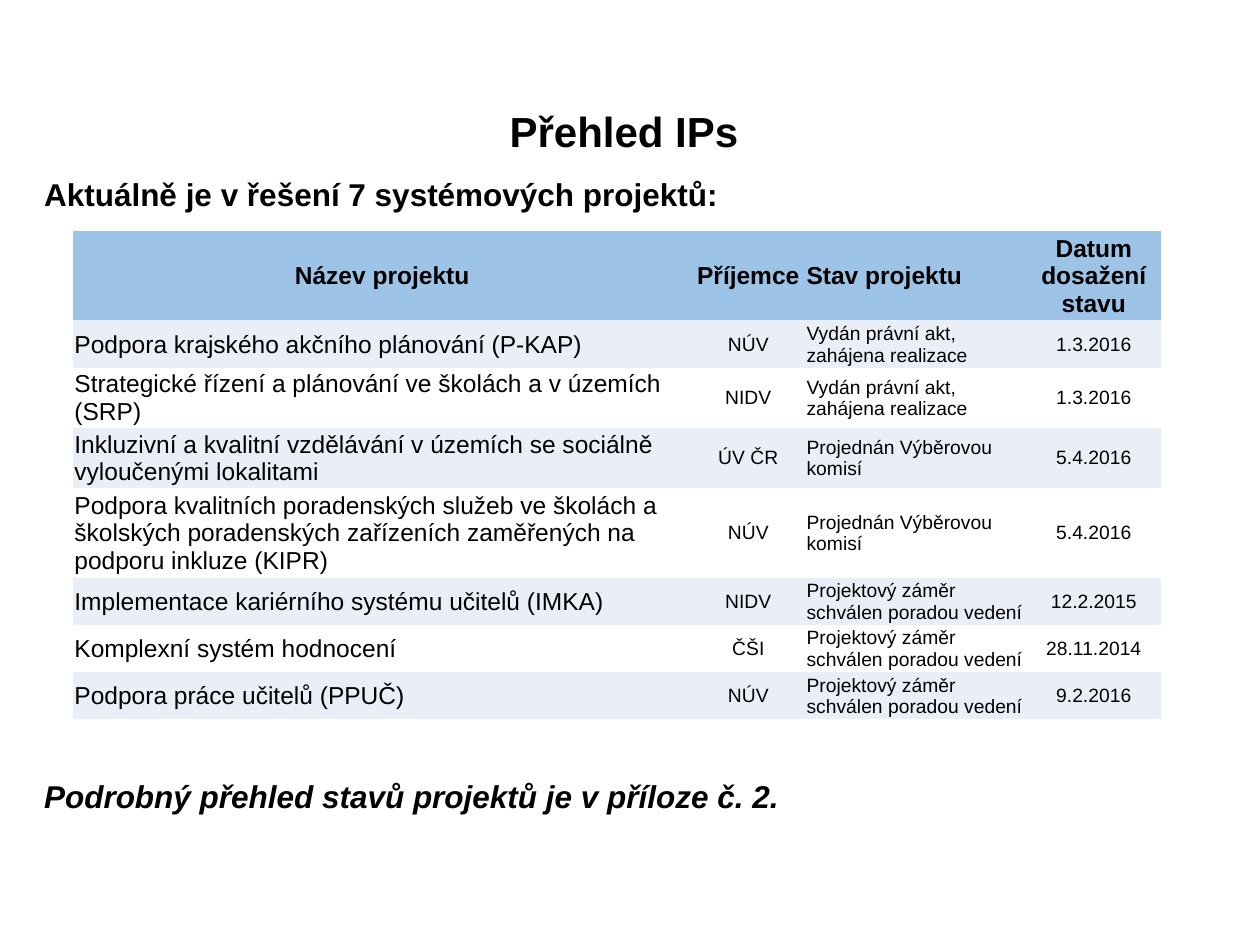
from pptx import Presentation
from pptx.dml.color import RGBColor
from pptx.enum.text import MSO_ANCHOR as Anchor, PP_ALIGN as Align
from pptx.util import Cm, Pt

NOTES = [
    ("Přehled IPs", (0.64, 2.01, 23.88, 2.77), 24, Align.CENTER, False),
    ("Aktuálně je v řešení 7 systémových projektů:",
     (0.64, 3.4, 23.29, 11.02), 18, Align.LEFT, False),
    ("Podrobný přehled stavů projektů je v příloze č. 2.",
     (0.64, 15.54, 21.34, 1.8), 18, Align.LEFT, True),
]
HEAD = ("Název projektu", "Příjemce", "Stav projektu", "Datum dosažení stavu")
ACT = "Vydán právní akt, zahájena realizace"
PANEL = "Projednán Výběrovou komisí"
PLAN = "Projektový záměr schválen poradou vedení"
ROWS = [
    ("Podpora krajského akčního plánování (P-KAP)", "NÚV", ACT, "1.3.2016"),
    ("Strategické řízení a plánování ve školách a v územích (SRP)",
     "NIDV", ACT, "1.3.2016"),
    ("Inkluzivní a kvalitní vzdělávání v územích se sociálně vyloučenými lokalitami",
     "ÚV ČR", PANEL, "5.4.2016"),
    ("Podpora kvalitních poradenských služeb ve školách a školských poradenských "
     "zařízeních zaměřených na podporu inkluze (KIPR)", "NÚV", PANEL, "5.4.2016"),
    ("Implementace kariérního systému učitelů (IMKA)", "NIDV", PLAN, "12.2.2015"),
    ("Komplexní systém hodnocení", "ČŠI", PLAN, "28.11.2014"),
    ("Podpora práce učitelů (PPUČ)", "NÚV", PLAN, "9.2.2016"),
]
WIDTHS = (12.45, 2.31, 4.45, 2.72)
LINES = (3, 1, 2, 2, 3, 1, 1, 1)
HEIGHTS = {1: 0.95, 2: 1.21, 3: 1.81}
BLUE, PALE, WHITE, BLACK = "9DC3E6", "EAEFF7", "FFFFFF", "000000"
PLAIN = "{2D5ABB26-0587-4C30-8999-92F81FD0307C}"


def color(code):
    return RGBColor.from_string(code)


def write(frame, text, size, align, bold, slant=False):
    frame.word_wrap = True
    para = frame.paragraphs[0]
    para.text = text
    para.alignment = align
    font = para.font
    font.name, font.size = "Arial", Pt(size)
    font.bold, font.italic = bold, slant
    font.color.rgb = color(BLACK)


def add_note(slide, text, place, size, align, slant):
    box = slide.shapes.add_textbox(*map(Cm, place))
    write(box.text_frame, text, size, align, True, slant)


def fill_cell(cell, text, row, col):
    cell.fill.solid()
    cell.fill.fore_color.rgb = color(BLUE if row == 0 else PALE if row % 2 else WHITE)
    cell.vertical_anchor = Anchor.MIDDLE
    cell.margin_left = cell.margin_right = cell.margin_top = Cm(0.02)
    cell.margin_bottom = 0
    size = 14 if row == 0 or col == 0 else 11
    left = col == 2 or (col == 0 and row > 0)
    write(cell.text_frame, text, size, Align.LEFT if left else Align.CENTER, row == 0)


def add_grid(slide):
    data = [HEAD] + ROWS
    highs = [HEIGHTS[n] for n in LINES]
    shape = slide.shapes.add_table(
        len(data), len(HEAD), Cm(1.48), Cm(4.65), Cm(sum(WIDTHS)), Cm(sum(highs)))
    table = shape.table
    table.first_row = table.horz_banding = False
    table._tbl.tblPr[0].text = PLAIN
    for col, width in zip(table.columns, WIDTHS):
        col.width = Cm(width)
    for row, high in zip(table.rows, highs):
        row.height = Cm(high)
    for r, line in enumerate(data):
        for c, text in enumerate(line):
            fill_cell(table.cell(r, c), text, r, c)


def main():
    deck = Presentation()
    deck.slide_width, deck.slide_height = Cm(25.4), Cm(19.05)
    slide = deck.slides.add_slide(deck.slide_layouts[6])
    for note in NOTES[:2]:
        add_note(slide, *note)
    add_grid(slide)
    add_note(slide, *NOTES[2])
    deck.save("out.pptx")


if __name__ == "__main__":
    main()
